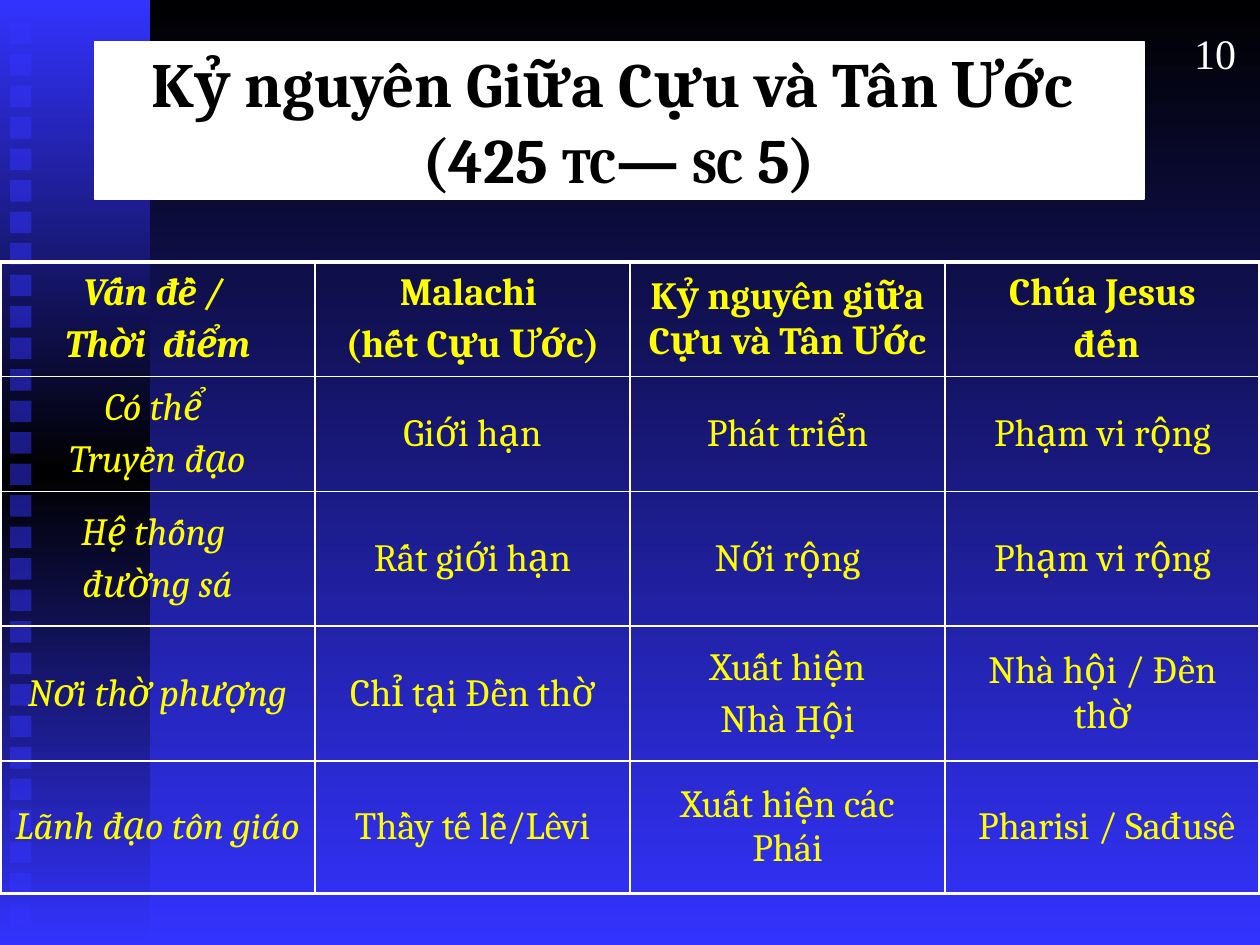
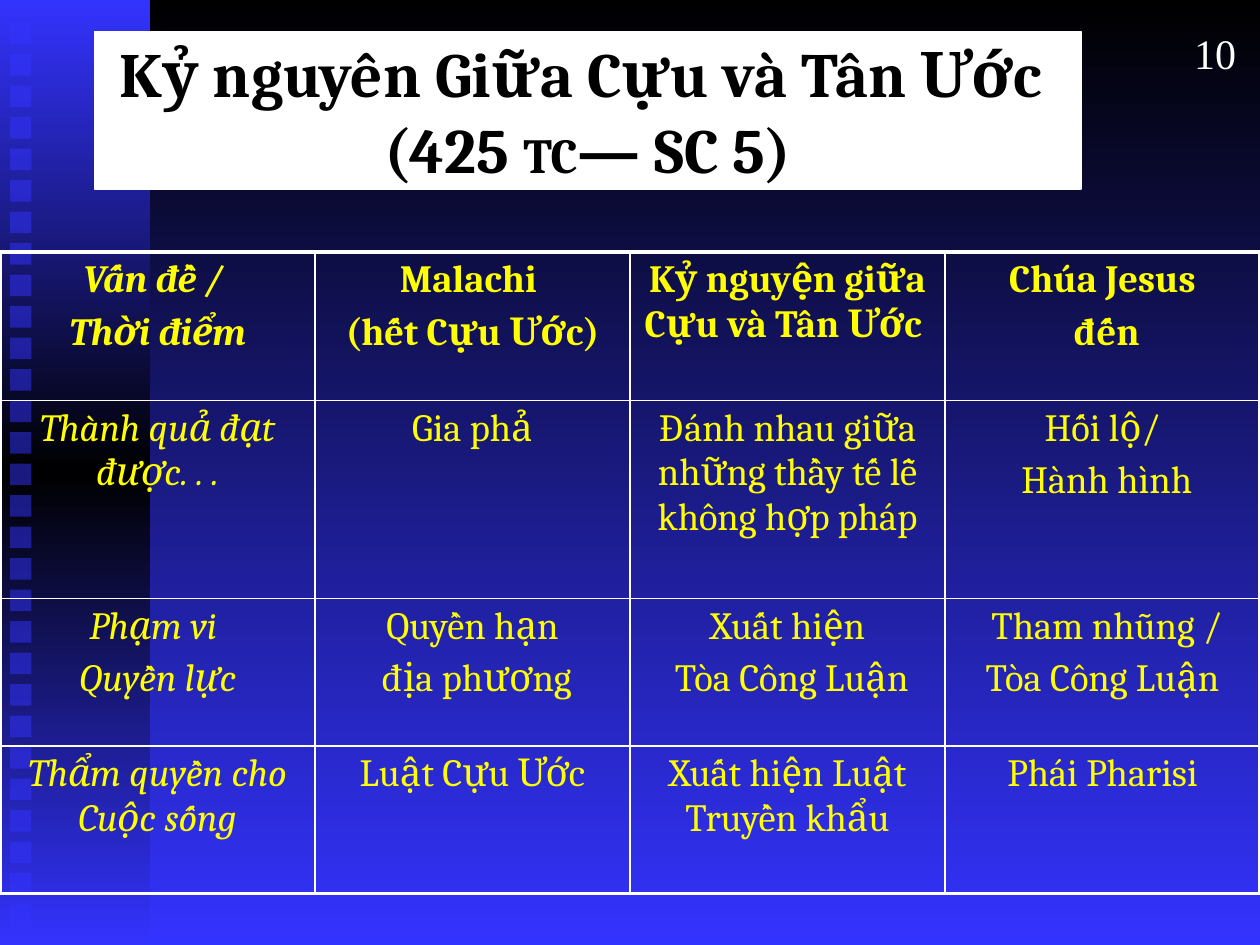
from copy import deepcopy

from lxml import etree
from pptx import Presentation
from pptx.dml.color import RGBColor
from pptx.enum import shapes, text
from pptx.oxml.ns import qn
from pptx.util import Inches, Pt

BLACK = RGBColor(0x00, 0x00, 0x00)
WHITE = RGBColor(0xFF, 0xFF, 0xFF)
BLUE = RGBColor(0x33, 0x33, 0xFF)
YELLOW = RGBColor(0xFF, 0xFF, 0x00)
SERIF = "Cambria"
ROMAN = "Times New Roman"
BIG, SMALL = 36, 28
THICK, THIN = 2.25, 1

HEAD = "Kỷ nguyên Giữa Cựu và Tân Ước "

# Each cell is a list of paragraphs.
SPREAD = [
    [["Vấn đề / ", "Thời  điểm"], ["Malachi ", "(hết Cựu Ước)"],
     ["Kỷ nguyên giữa Cựu và Tân Ước"], ["Chúa Jesus", " đến"]],
    [["Có thể ", "Truyền đạo"], ["Giới hạn"], ["Phát triển"], ["Phạm vi rộng"]],
    [["Hệ thống ", "đường sá"], ["Rất giới hạn"], ["Nới rộng"], ["Phạm vi rộng"]],
    [["Nơi thờ phượng"], ["Chỉ tại Đền thờ"], ["Xuất hiện", " Nhà Hội "],
     ["Nhà hội / Đền thờ"]],
    [["Lãnh đạo tôn giáo"], ["Thầy tế lễ/Lêvi"], ["Xuất hiện các Phái"],
     ["\u00a0Pharisi / Sađusê"]],
]
POWER = [
    [["Vấn đề / ", "Thời điểm"], ["Malachi ", "(hết Cựu Ước)"],
     ["Kỷ nguyện giữa Cựu và Tân Ước "], ["Chúa Jesus", " đến"]],
    [["Thành quả đạt được. . ."], ["Gia phả"],
     ["Đánh nhau giữa những thầy tế lễ không hợp pháp"],
     ["Hối lộ/", " Hành hình"]],
    [["Phạm vi ", "Quyền lực"], ["Quyền hạn", " địa phương"],
     ["Xuất hiện", " Tòa Công Luận"], ["\u00a0Tham nhũng /", "Tòa Công Luận"]],
    [["Thẩm quyền cho Cuộc sống"], ["Luật Cựu Ước"],
     ["Xuất hiện Luật Truyền khẩu"], ["Phái Pharisi"]],
]


def add_run(para, words, size, color, face=SERIF, bold=False, slant=False):
    run = para.add_run()
    run.text = words
    font = run.font
    font.name, font.size, font.bold, font.italic = face, Pt(size), bold, slant
    font.color.rgb = color


def shade(fill, root, colors):
    """Fill from top to bottom with evenly spaced colours."""
    fill.gradient()
    fill.gradient_angle = 270
    stops = root.find(".//" + qn("a:gsLst"))
    while len(stops) < len(colors):
        stops.append(deepcopy(stops[0]))
    for i, (stop, color) in enumerate(zip(fill.gradient_stops, colors)):
        stop.color.rgb = color
        stop.position = i / (len(colors) - 1)


def add_rect(group, left, top, width, height):
    rect = group.shapes.add_shape(
        shapes.MSO_SHAPE.RECTANGLE,
        Inches(left), Inches(top), Inches(width), Inches(height))
    rect.shadow.inherit = False
    rect.line.fill.background()
    return rect


def dress(layout, slide):
    """Give the layout its backdrop, side band and column of squares."""
    shade(layout.background.fill, layout.element, [BLACK, BLUE])
    group = slide.shapes.add_group_shape()
    band = add_rect(group, 0, 0, 1.19, 7.5)
    shade(band.fill, band.element, [BLUE, BLACK, BLUE])
    for i in range(29):
        square = add_rect(group, 0.08, 0.18 + 0.25 * i, 0.17, 0.17)
        square.fill.solid()
        square.fill.fore_color.rgb = BLUE
        tint = square.element.spPr.find(".//" + qn("a:srgbClr"))
        etree.SubElement(tint, qn("a:alpha"), val="50000")
    layout.shapes.element.append(group.element)


def set_title(slide, top, width, runs):
    title = slide.shapes.title
    title.left, title.top = Inches(0.75), Inches(top)
    title.width, title.height = Inches(width), Inches(1.25)
    title.fill.solid()
    title.fill.fore_color.rgb = WHITE
    title.line.color.rgb = WHITE
    title.line.width = Pt(0.75)
    frame = title.text_frame
    frame.auto_size = text.MSO_AUTO_SIZE.NONE
    frame.word_wrap = True
    frame.vertical_anchor = text.MSO_ANCHOR.MIDDLE
    para = frame.paragraphs[0]
    para.alignment = text.PP_ALIGN.CENTER
    add_run(para, HEAD, BIG, BLACK, bold=True)
    para.add_line_break()
    for words, size in runs:
        add_run(para, words, size, BLACK, bold=True)


def add_page(slide, number):
    box = slide.shapes.add_textbox(
        Inches(9.38), Inches(0.17), Inches(0.53), Inches(0.5))
    frame = box.text_frame
    frame.word_wrap = False
    frame.auto_size = text.MSO_AUTO_SIZE.SHAPE_TO_FIT_TEXT
    para = frame.paragraphs[0]
    para.alignment = text.PP_ALIGN.CENTER
    add_run(para, number, 24, WHITE, face=ROMAN)


def set_edge(cell, side, width):
    line = etree.SubElement(
        cell._tc.get_or_add_tcPr(), qn("a:ln" + side), w=str(Pt(width)))
    fill = etree.SubElement(line, qn("a:solidFill"))
    etree.SubElement(fill, qn("a:srgbClr"), val=str(WHITE))


def fill_cell(cell, lines, anchor, bold, slant):
    cell.fill.background()
    cell.vertical_anchor = anchor
    frame = cell.text_frame
    for i, words in enumerate(lines):
        para = frame.add_paragraph() if i else frame.paragraphs[0]
        para.alignment = text.PP_ALIGN.CENTER
        para.space_before = Pt(4.4)
        add_run(para, words, 22, YELLOW, bold=bold, slant=slant)


def add_grid(slide, top, heights, rows, anchor):
    """Add a full-width table with a thick outer frame."""
    last_row, last_col = len(rows) - 1, len(rows[0]) - 1
    frame = slide.shapes.add_table(
        len(rows), len(rows[0]), 0, Inches(top), Inches(10), Inches(sum(heights)))
    table = frame.table
    table.first_row = table.horz_banding = False
    for r, (cells, height) in enumerate(zip(rows, heights)):
        table.rows[r].height = Inches(height)
        for c, lines in enumerate(cells):
            cell = table.cell(r, c)
            outer = {"L": c == 0, "R": c == last_col,
                     "T": r == 0, "B": r == last_row}
            for side, thick in outer.items():
                set_edge(cell, side, THICK if thick else THIN)
            fill_cell(cell, lines, anchor, bold=r == 0, slant=c == 0)


def main():
    deck = Presentation()
    deck.slide_width, deck.slide_height = Inches(10), Inches(7.5)
    layout = deck.slide_layouts[5]
    first, second = [deck.slides.add_slide(layout) for _ in range(2)]
    dress(layout, first)

    set_title(first, 0.33, 8.33, [
        ("(425 ", BIG), ("TC", SMALL), ("— ", BIG), ("SC", SMALL), (" 5)", BIG)])
    add_grid(first, 2.08, [0.91, 0.91, 1.07, 1.07, 1.05], SPREAD,
             text.MSO_ANCHOR.MIDDLE)

    set_title(second, 0.25, 7.83, [
        ("(425 ", BIG), ("TC", SMALL), ("— SC 5)", BIG)])
    add_grid(second, 2, [1.18, 1.57, 1.17, 1.17], POWER, text.MSO_ANCHOR.TOP)

    for slide in (first, second):
        add_page(slide, "10")
    deck.save("out.pptx")


if __name__ == "__main__":
    main()
